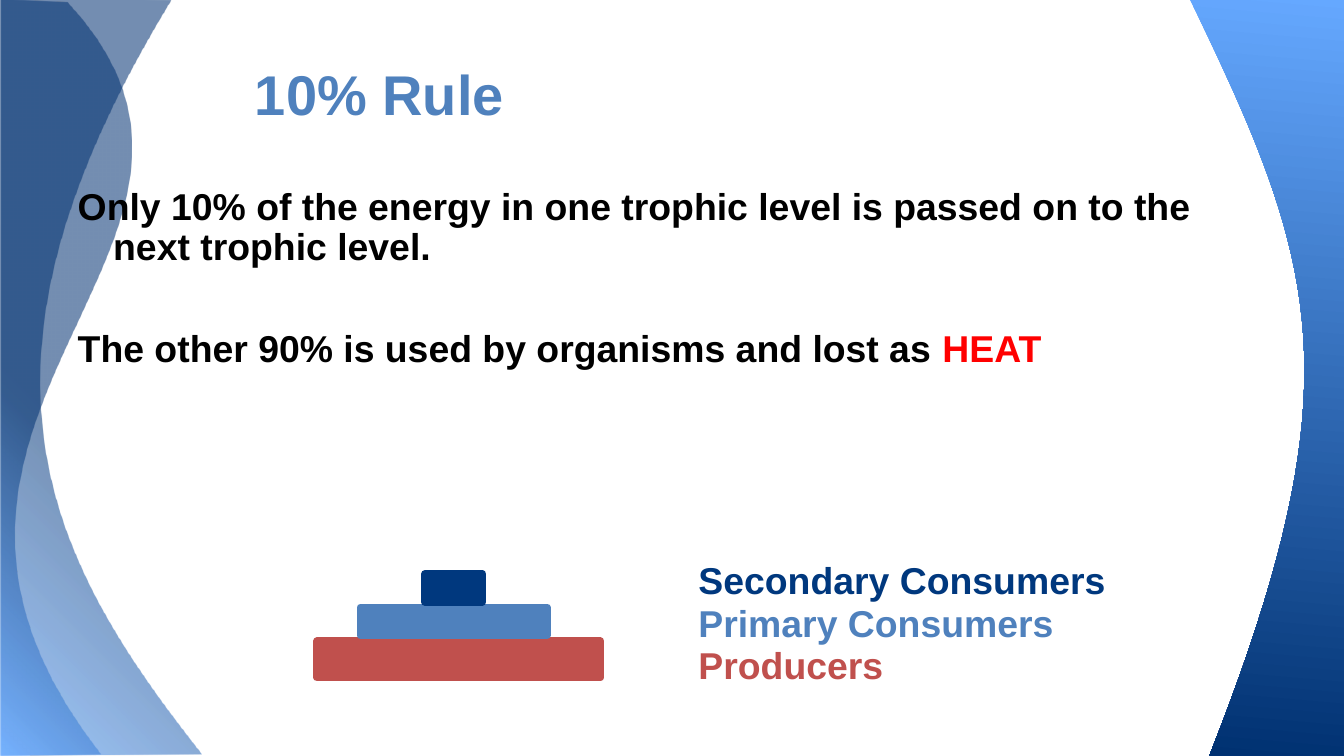
from dataclasses import dataclass

from pptx import Presentation
from pptx.dml.color import RGBColor
from pptx.enum.shapes import MSO_SHAPE
from pptx.enum.text import MSO_ANCHOR
from pptx.oxml import parse_xml
from pptx.oxml.ns import nsdecls
from pptx.util import Cm, Pt


@dataclass(frozen=True)
class Theme:
    font: str = "Arial"
    title_size: int = 30
    text_size: int = 20
    black: str = "000000"
    red: str = "FF0000"
    blue: str = "4F81BD"
    navy: str = "00387E"
    brick: str = "C0504D"
    # Gradient stops: position in percent, colour, opacity in percent
    left_stops: tuple = ((0, "549FFF", 54), (41, "003171", 54), (100, "003171", 54))
    right_stops: tuple = ((0, "65A8FF", 100), (100, "003171", 100))


THEME = Theme()
CORNER_GLOW = '<a:path path="circle"><a:fillToRect t="100000" r="100000"/></a:path>'
DOWNWARD = '<a:lin ang="5700000" scaled="0"/>'

# Waves: four Bezier points, then the remaining corners, in cm
LEFT_WAVES = (
    (((3.23, 0), (-0.97, 6.91), (0.84, 10.49), (3.81, 14.25)),
     ((-0.03, 14.28), (0, -0.05))),
    (((1.27, 0.05), (5.51, 4.62), (-3.1, 7.82), (1.9, 14.25)),
     ((0.03, 14.28), (0.03, 0))),
)
RIGHT_WAVE = (((22.86, 14.28), (25.65, 7.21), (24.92, 4.98), (22.48, -0.03)),
              ((25.53, -0.03), (25.53, 14.28)))

# Trophic levels from the top: label, colour, left, top, width, height in cm
LEVELS = (
    ("Secondary Consumers", THEME.navy, 8.03, 10.85, 1.09, 0.53),
    ("Primary Consumers", THEME.blue, 6.81, 11.48, 3.53, 0.53),
    ("Producers", THEME.brick, 5.99, 12.12, 5.36, 0.69),
)
LABEL_LEFT, LABEL_TOP, LABEL_STEP = 13, 10.44, 0.8


def bezier_points(curve, steps=40):
    for step in range(steps + 1):
        t = step / steps
        weights = ((1 - t) ** 3, 3 * t * (1 - t) ** 2, 3 * t ** 2 * (1 - t), t ** 3)
        yield tuple(sum(w * p[axis] for w, p in zip(weights, curve)) for axis in (0, 1))


def add_wave(slide, curve, corners, stops, direction):
    outline = [(Cm(x), Cm(y)) for x, y in (*bezier_points(curve), *corners)]
    builder = slide.shapes.build_freeform(*outline[0])
    builder.add_line_segments(outline[1:], close=True)
    wave = builder.convert_to_shape()
    wave.shadow.inherit = False
    wave.line.fill.background()
    stop_xml = "".join(
        f'<a:gs pos="{position * 1000}"><a:srgbClr val="{color}">'
        f'<a:alpha val="{opacity * 1000}"/></a:srgbClr></a:gs>'
        for position, color, opacity in stops)
    gradient = parse_xml(f'<a:gradFill {nsdecls("a")} rotWithShape="1">'
                         f'<a:gsLst>{stop_xml}</a:gsLst>{direction}</a:gradFill>')
    wave._element.spPr.insert(2, gradient)  # after position and geometry


def add_text_frame(slide, left, top, width, height):
    frame = slide.shapes.add_textbox(Cm(left), Cm(top), Cm(width), Cm(height)).text_frame
    frame.word_wrap = True
    frame.margin_left = frame.margin_right = Cm(0.2)
    frame.margin_top = frame.margin_bottom = Cm(0.1)
    return frame


def style_run(run, color, size=THEME.text_size):
    run.font.name = THEME.font
    run.font.size = Pt(size)
    run.font.bold = True
    run.font.color.rgb = RGBColor.from_string(color)


def add_statement(paragraph, text, space_before):
    paragraph.text = text
    paragraph.line_spacing = 0.9
    paragraph.space_before = Pt(space_before)
    indent = Cm(0.67)
    properties = paragraph._p.get_or_add_pPr()
    properties.set("marL", str(indent))
    properties.set("indent", str(-indent))
    style_run(paragraph.runs[0], THEME.black)


def add_tier(slide, color, left, top, width, height):
    tier = slide.shapes.add_shape(MSO_SHAPE.RECTANGLE, Cm(left), Cm(top), Cm(width), Cm(height))
    tier.shadow.inherit = False
    tier.fill.solid()
    tier.fill.fore_color.rgb = RGBColor.from_string(color)
    tier.line.color.rgb = RGBColor.from_string(color)
    tier.line.width = Pt(4)


def add_label(slide, text, color, top):
    frame = add_text_frame(slide, LABEL_LEFT, top, 10.87, 0.94)
    frame.text = text
    style_run(frame.paragraphs[0].runs[0], color)


def main():
    presentation = Presentation()
    presentation.slide_width, presentation.slide_height = Cm(25.4), Cm(14.29)
    slide = presentation.slides.add_slide(presentation.slide_layouts[6])

    # Side waves
    for curve, corners in LEFT_WAVES:
        add_wave(slide, curve, corners, THEME.left_stops, CORNER_GLOW)
    add_wave(slide, *RIGHT_WAVE, THEME.right_stops, DOWNWARD)

    # Title
    title = add_text_frame(slide, 4.62, 0.46, 11.18, 2.77)
    title.vertical_anchor = MSO_ANCHOR.MIDDLE
    title.text = "10% Rule"
    title.paragraphs[0].line_spacing = 0.9
    style_run(title.paragraphs[0].runs[0], THEME.blue, THEME.title_size)

    # The rule
    rule = add_text_frame(slide, 1.27, 3.45, 22.86, 10.08)
    add_statement(rule.paragraphs[0], "Only 10% of the energy in one trophic level "
                  "is passed on to the next trophic level.", 6)
    loss = rule.add_paragraph()
    add_statement(loss, "The other 90% is used by organisms and lost as ", 33)
    heat = loss.add_run()
    heat.text = "HEAT"
    style_run(heat, THEME.red)

    # Energy pyramid and its labels
    for row, (label, color, *box) in reversed(list(enumerate(LEVELS))):
        add_tier(slide, color, *box)
        add_label(slide, label, color, LABEL_TOP + row * LABEL_STEP)

    presentation.save("out.pptx")


if __name__ == "__main__":
    main()
